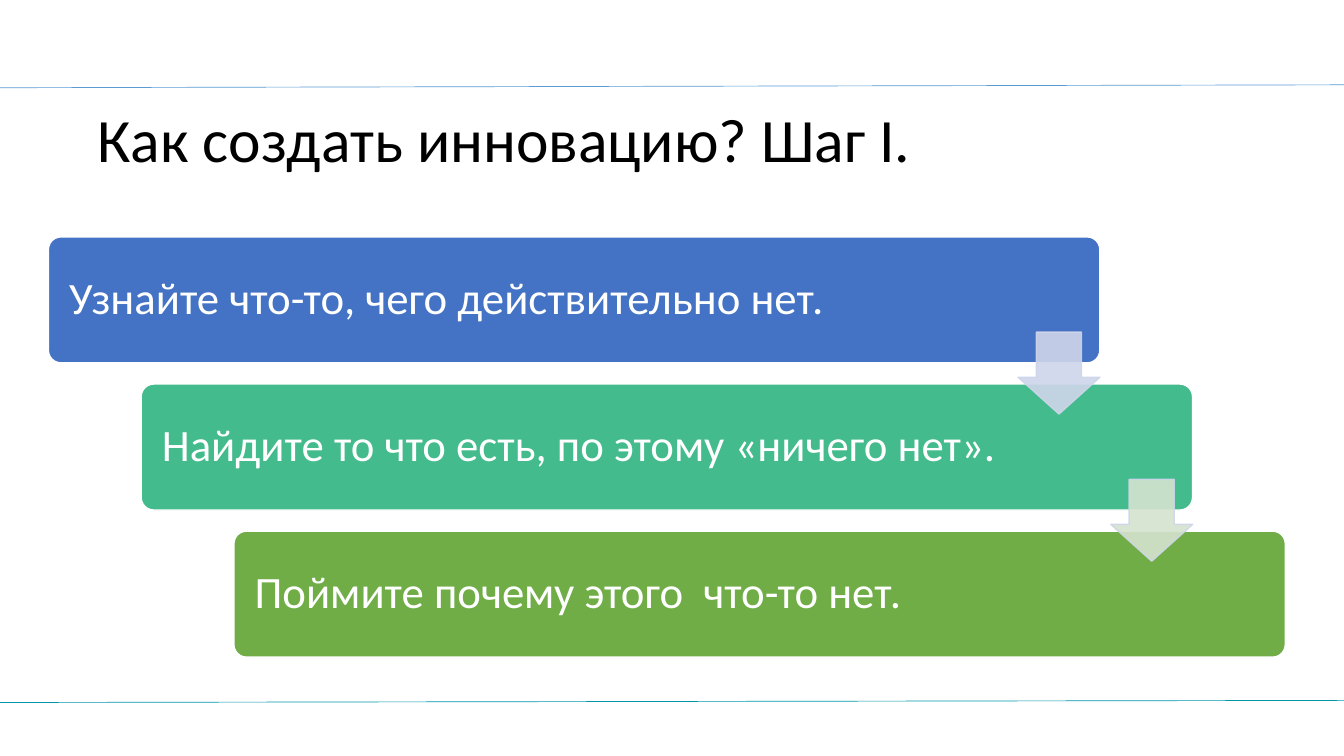
"""Build the slide with a staircase of three steps towards an innovation."""
import lxml.etree
import pptx
import pptx.dml.color
import pptx.enum.shapes
import pptx.enum.text
import pptx.oxml.ns
import pptx.util

Pt = pptx.util.Pt
RGBColor = pptx.dml.color.RGBColor
SHAPES = pptx.enum.shapes.MSO_SHAPE

BLACK = RGBColor(0x00, 0x00, 0x00)
WHITE = RGBColor(0xFF, 0xFF, 0xFF)
TOP_RULE = RGBColor(0x5B, 0x9B, 0xD5)
BOTTOM_RULE = RGBColor(0x00, 0x97, 0xA9)
ARROW_LINE = RGBColor(0xCF, 0xD5, 0xEA)
ARROW_FILLS = [ARROW_LINE, RGBColor(0xD5, 0xE3, 0xCF)]
STEPS = [
    ("Узнайте что-то, чего действительно нет.", RGBColor(0x44, 0x72, 0xC4)),
    ("Найдите то что есть, по этому «ничего нет».", RGBColor(0x43, 0xBB, 0x8D)),
    ("Поймите почему этого  что-то нет.", RGBColor(0x70, 0xAD, 0x47)),
]
STEP_RIGHT = 66.25
STEP_DOWN = 105.1
FRAME_FORMAT = {
    "word_wrap": True,
    "auto_size": pptx.enum.text.MSO_AUTO_SIZE.NONE,
    "vertical_anchor": pptx.enum.text.MSO_ANCHOR.MIDDLE,
}
STEP_MARGINS = {
    "margin_left": Pt(12.2),
    "margin_right": Pt(12.2),
    "margin_top": Pt(9.4),
    "margin_bottom": Pt(9.4),
}


def set_attributes(target, values):
    for name, value in values.items():
        setattr(target, name, value)


def write_text(shape, text, size, color, frame_format):
    frame = shape.text_frame
    set_attributes(frame, frame_format)
    frame.text = text
    paragraph = frame.paragraphs[0]
    set_attributes(paragraph, {"alignment": pptx.enum.text.PP_ALIGN.LEFT, "line_spacing": 0.9})
    font = paragraph.runs[0].font
    set_attributes(font, {"name": "Calibri", "size": Pt(size)})
    font.color.rgb = color


def add_rule(slide, begin_y, end_y, color):
    rule = slide.shapes.add_connector(
        pptx.enum.shapes.MSO_CONNECTOR.STRAIGHT, Pt(0), Pt(begin_y), Pt(960), Pt(end_y)
    )
    rule.line.color.rgb = color
    rule.line.width = Pt(0.48)
    lxml.etree.SubElement(rule.element.spPr, pptx.oxml.ns.qn("a:effectLst"))


def add_filled_shape(slide, kind, bounds, adjustments, fill, line):
    shape = slide.shapes.add_shape(kind, *map(Pt, bounds))
    for index, value in enumerate(adjustments):
        shape.adjustments[index] = value
    shape.shadow.inherit = False
    shape.fill.solid()
    shape.fill.fore_color.rgb = fill
    shape.line.color.rgb = line
    shape.line.width = Pt(1)
    return shape


def add_step(slide, index, text, fill):
    bounds = (34.6 + index * STEP_RIGHT, 169.2 + index * STEP_DOWN, 751, 90)
    step = add_filled_shape(slide, SHAPES.ROUNDED_RECTANGLE, bounds, [0.1], fill, WHITE)
    write_text(step, text, 32, WHITE, FRAME_FORMAT | STEP_MARGINS)


def add_arrow(slide, index, fill):
    bounds = (727.2 + index * STEP_RIGHT, 237.3 + index * STEP_DOWN, 58.5, 58.5)
    arrow = add_filled_shape(slide, SHAPES.DOWN_ARROW, bounds, [0.45, 0.55], fill, ARROW_LINE)
    arrow.adjustments[0] = 0.55
    arrow.adjustments[1] = 0.45
    for color in arrow.element.spPr.iter(pptx.oxml.ns.qn("a:srgbClr")):
        lxml.etree.SubElement(color, pptx.oxml.ns.qn("a:alpha"), val="90000")


def add_title(slide, text):
    title = slide.shapes.title
    set_attributes(
        title, {"left": Pt(62.6), "top": Pt(49.7), "width": Pt(828), "height": Pt(104.4)}
    )
    write_text(title, text, 44, BLACK, FRAME_FORMAT)


def main():
    presentation = pptx.Presentation()
    set_attributes(presentation, {"slide_width": Pt(960), "slide_height": Pt(540)})
    slide = presentation.slides.add_slide(presentation.slide_layouts.get_by_name("Title Only"))
    add_rule(slide, 62.7, 60.6, TOP_RULE)
    add_rule(slide, 501.8, 500.3, BOTTOM_RULE)
    add_title(slide, "Как создать инновацию? Шаг I.")
    for index, (text, fill) in enumerate(STEPS):
        add_step(slide, index, text, fill)
    for index, fill in enumerate(ARROW_FILLS):
        add_arrow(slide, index, fill)
    presentation.save("out.pptx")


if __name__ == "__main__":
    main()
